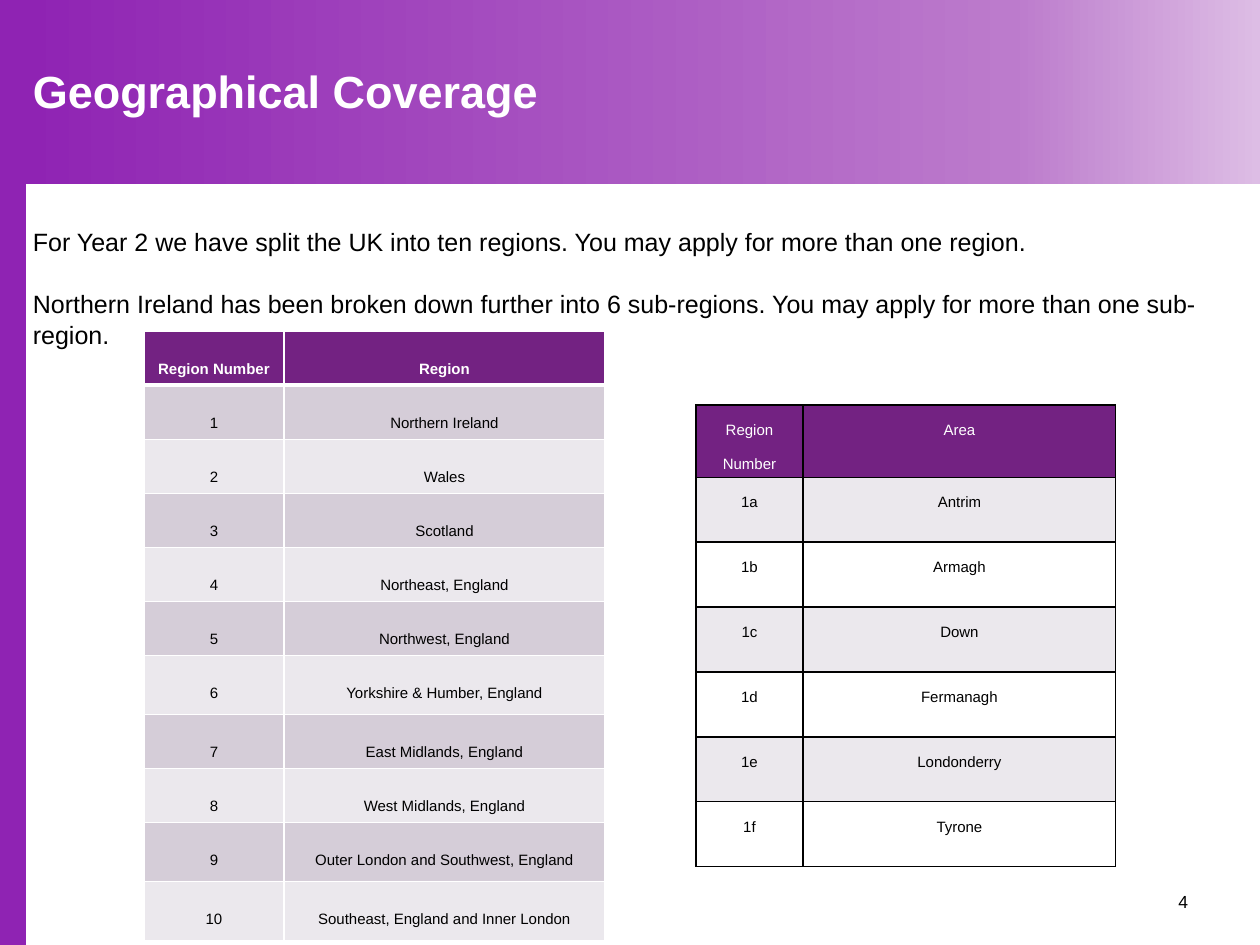
from lxml import etree
from copy import deepcopy
from pptx import Presentation
from pptx.dml.color import RGBColor
from pptx.enum.shapes import MSO_SHAPE
from pptx.enum.text import MSO_ANCHOR, PP_ALIGN
from pptx.oxml.ns import qn
from pptx.util import Pt

PX = 914400 // 90
FONT = "Arial"
RECTANGLE = MSO_SHAPE.RECTANGLE
TOP, MIDDLE = MSO_ANCHOR.TOP, MSO_ANCHOR.MIDDLE
LEFT, CENTER, RIGHT = PP_ALIGN.LEFT, PP_ALIGN.CENTER, PP_ALIGN.RIGHT

VIOLET = RGBColor(0x8F, 0x23, 0xB3)
ORCHID = RGBColor(0xBC, 0x7B, 0xCC)
LILAC = RGBColor(0xDD, 0xBD, 0xE5)
PLUM = RGBColor(0x73, 0x22, 0x82)
MAUVE = RGBColor(0xD5, 0xCD, 0xD8)
PALE = RGBColor(0xEB, 0xE8, 0xED)
WHITE = RGBColor(0xFF, 0xFF, 0xFF)
BLACK = RGBColor(0, 0, 0)

INTRO = [
    "For Year 2 we have split the UK into ten regions. You may apply for more than one region.",
    "Northern Ireland has been broken down further into 6 sub-regions. "
    "You may apply for more than one sub-region.",
]
REGIONS = [
    "Northern Ireland", "Wales", "Scotland", "Northeast, England",
    "Northwest, England", "Yorkshire & Humber, England",
    "East Midlands, England", "West Midlands, England",
    "Outer London and Southwest, England", "Southeast, England and Inner London",
]
AREAS = ["Antrim", "Armagh", "Down", "Fermanagh", "Londonderry", "Tyrone"]
TALL_REGIONS = (6, 9, 10)


def px(*lengths):
    return [length * PX for length in lengths]


def set_values(target, values):
    for name, value in values.items():
        setattr(target, name, value)


def write_para(para, text, size, color, bold=False, **layout):
    set_values(para, layout)
    span = para.add_run()
    span.text = text
    set_values(span.font, {"name": FONT, "size": Pt(size), "bold": bold})
    span.font.color.rgb = color


def add_text(page, bounds, texts, size, color, bold=False, gap=0,
             align=LEFT, spacing=1.0, **frame_values):
    box = page.shapes.add_textbox(*px(*bounds))
    frame = box.text_frame
    set_values(frame, {"word_wrap": True, **frame_values})
    for index, text in enumerate(texts):
        para = frame.add_paragraph() if index else frame.paragraphs[0]
        layout = {"alignment": align, "line_spacing": spacing}
        if index:
            layout["space_before"] = Pt(gap)
        write_para(para, text, size, color, bold, **layout)


def add_band(page, bounds):
    band = page.shapes.add_shape(RECTANGLE, *px(*bounds))
    band.shadow.inherit = False
    return band


def add_side_bar(page):
    bar = add_band(page, (0, 0, 25, 945))
    bar.fill.solid()
    bar.fill.fore_color.rgb = VIOLET
    bar.line.color.rgb = VIOLET
    bar.line.width = Pt(2)


def add_title_band(page):
    band = add_band(page, (24, 0, 1236, 184))
    band.line.fill.background()
    band.fill.gradient()
    band.fill.gradient_angle = 0
    stop_list = band._element.spPr.find(".//" + qn("a:gsLst"))
    stop_list.append(deepcopy(stop_list[-1]))
    colors = [(0, VIOLET), (0.8, ORCHID), (1, LILAC)]
    for stop, (position, color) in zip(band.fill.gradient_stops, colors):
        stop.position = position
        stop.color.rgb = color


def add_border(cell, side, color, width):
    properties = cell._tc.get_or_add_tcPr()
    line = etree.SubElement(properties, qn("a:ln" + side), w=str(Pt(width)))
    fill = etree.SubElement(line, qn("a:solidFill"))
    etree.SubElement(fill, qn("a:srgbClr"), val=str(color))


def add_grid(page, origin, columns, heights, rows, fills, border,
             header_rule=1, header_bold=False, margins=None, **layout):
    bounds = px(*origin, sum(columns), sum(heights))
    table = page.shapes.add_table(len(rows), len(columns), *bounds).table
    for column, width in zip(table.columns, columns):
        column.width = width * PX
    for row_index, texts in enumerate(rows):
        header = row_index == 0
        table.rows[row_index].height = heights[row_index] * PX
        fill = PLUM if header else fills[(row_index - 1) % len(fills)]
        widths = {
            "L": 1, "R": 1,
            "T": header_rule if row_index == 1 else 1,
            "B": header_rule if header else 1,
        }
        for column_index, text in enumerate(texts):
            cell = table.cell(row_index, column_index)
            set_values(cell, margins or {})
            for side, width in widths.items():
                add_border(cell, side, border, width)
            cell.fill.solid()
            cell.fill.fore_color.rgb = fill
            write_para(cell.text_frame.paragraphs[0], text, 12,
                       WHITE if header else BLACK, header and header_bold,
                       alignment=CENTER, **layout)


def add_region_table(page):
    rows = [("Region Number", "Region")]
    rows += [(str(number), name) for number, name in enumerate(REGIONS, 1)]
    heights = [59 if number in TALL_REGIONS else 54 for number in range(len(rows))]
    add_grid(page, (144, 331), (140, 321), heights, rows, (MAUVE, PALE), WHITE,
             header_rule=3, header_bold=True, line_spacing=2.5)


def add_area_table(page):
    rows = [("Region Number", "Area")]
    rows += [("1" + letter, name) for letter, name in zip("abcdef", AREAS)]
    heights = [72] + [65] * len(AREAS)
    margins = {"margin_left": 6 * PX, "margin_right": 6 * PX,
               "margin_top": 0, "margin_bottom": 0}
    add_grid(page, (696, 405), (107, 313), heights, rows, (PALE, WHITE), BLACK,
             margins=margins, line_spacing=2.0, space_after=Pt(6))


def main():
    deck = Presentation()
    deck.slide_width, deck.slide_height = px(1260, 945)
    page = deck.slides.add_slide(deck.slide_layouts[6])
    add_side_bar(page)
    add_title_band(page)
    add_text(page, (903, 876, 294, 50), ["4"], 14, BLACK,
             align=RIGHT, vertical_anchor=MIDDLE)
    add_text(page, (24, 0, 1236, 184), ["Geographical Coverage"], 36, WHITE,
             bold=True, vertical_anchor=TOP, margin_top=64 * PX)
    add_text(page, (24, 221, 1236, 160), INTRO, 20, BLACK, gap=24, spacing=1.05)
    add_region_table(page)
    add_area_table(page)
    deck.save("out.pptx")


if __name__ == "__main__":
    main()
